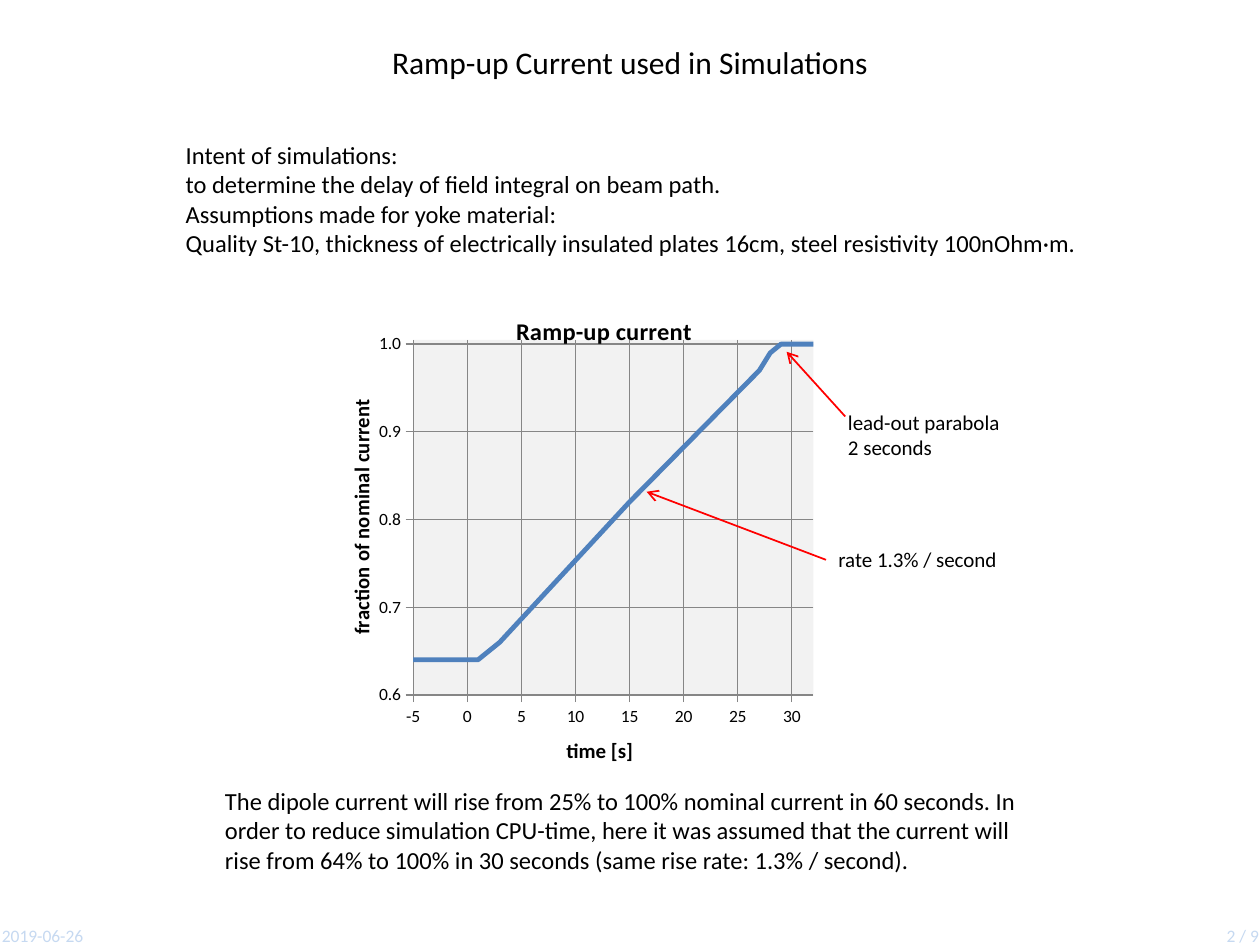
from lxml import etree
from pptx import Presentation
from pptx.chart import data
from pptx.dml.color import RGBColor
from pptx.enum import chart as ch, shapes, text
from pptx.oxml import parse_xml
from pptx.oxml.ns import nsdecls, qn
from pptx.util import Pt

FONT = "Calibri"
BLACK = RGBColor(0x00, 0x00, 0x00)
PALE_BLUE = RGBColor(0xC6, 0xD9, 0xF1)
CURVE_BLUE = RGBColor(0x4F, 0x81, 0xBD)
PLOT_GRAY = RGBColor(0xF2, 0xF2, 0xF2)
GRID_GRAY = RGBColor(0x86, 0x86, 0x86)
RED = RGBColor(0xFF, 0x00, 0x00)

RAMP = [(-20, 0.64), (-1, 0.64), (0, 0.64), (0, 0.64), (1, 0.64), (2, 0.65),
        (2, 0.65), (3, 0.66), (15, 0.82), (27, 0.97), (28, 0.99), (28, 0.99),
        (29, 1), (30, 1), (30, 1), (32, 1)]


def style_font(font, size, color=BLACK, bold=False):
    font.name = FONT
    font.size = Pt(size)
    font.bold = bold
    font.color.rgb = color


def add_text(slide, box, lines, size, color=BLACK, align=text.PP_ALIGN.LEFT):
    label = slide.shapes.add_textbox(*map(Pt, box))
    frame = label.text_frame
    frame.word_wrap = True
    frame.auto_size = text.MSO_AUTO_SIZE.SHAPE_TO_FIT_TEXT
    frame.text = "\n".join(lines)
    for paragraph in frame.paragraphs:
        paragraph.alignment = align
        for run in paragraph.runs:
            style_font(run.font, size, color)
    return label


def add_arrow(slide, start, tip):
    arrow = slide.shapes.add_connector(
        shapes.MSO_CONNECTOR.STRAIGHT, *map(Pt, (*start, *tip)))
    arrow.line.color.rgb = RED
    arrow.line.width = Pt(1)
    line = arrow.line._get_or_add_ln()
    etree.SubElement(line, qn("a:tailEnd"), type="arrow")
    etree.SubElement(arrow._element.spPr, qn("a:effectLst"))
    return arrow


def manual_layout(x, y, extent=None):
    target = '<c:layoutTarget val="inner"/>' if extent else ""
    size = '<c:w val="{}"/><c:h val="{}"/>'.format(*extent) if extent else ""
    return parse_xml(
        f'<c:layout {nsdecls("c")}><c:manualLayout>{target}'
        f'<c:xMode val="edge"/><c:yMode val="edge"/>'
        f'<c:x val="{x}"/><c:y val="{y}"/>{size}</c:manualLayout></c:layout>')


def set_title(owner, words, size, x, y):
    title = owner.chart_title if hasattr(owner, "chart_title") else owner.axis_title
    title.text_frame.text = words
    style_font(title.text_frame.paragraphs[0].runs[0].font, size, bold=True)
    element = title._element
    for layout in element.findall(qn("c:layout")):
        element.remove(layout)
    element.find(qn("c:tx")).addnext(manual_layout(x, y))


def style_axis(axis, low, high, step, number_format):
    axis.minimum_scale, axis.maximum_scale, axis.major_unit = low, high, step
    axis.major_tick_mark = ch.XL_TICK_MARK.OUTSIDE
    axis.minor_tick_mark = ch.XL_TICK_MARK.NONE
    axis.tick_label_position = ch.XL_TICK_LABEL_POSITION.LOW
    axis.crosses = ch.XL_AXIS_CROSSES.MINIMUM
    axis.tick_labels.number_format = number_format
    axis.tick_labels.number_format_is_linked = False
    axis.has_major_gridlines = True
    for line in (axis.format.line, axis.major_gridlines.format.line):
        line.color.rgb = GRID_GRAY
        line.width = Pt(0.75)


def add_ramp_chart(slide, box):
    ramp_data = data.XyChartData()
    series_data = ramp_data.add_series("Series 1")
    for time, fraction in RAMP:
        series_data.add_data_point(time, fraction)
    chart = slide.shapes.add_chart(
        ch.XL_CHART_TYPE.XY_SCATTER_SMOOTH_NO_MARKERS,
        *map(Pt, box), ramp_data).chart
    chart.has_legend = False
    style_font(chart.font, 10)
    style_axis(chart.category_axis, -5, 32, 5, "General")
    style_axis(chart.value_axis, 0.6, 1.005, 0.1, "0.0")
    set_title(chart, "Ramp-up current", 14, 0.37, 0.04)
    set_title(chart.category_axis, "time [s]", 12, 0.47, 0.94)
    set_title(chart.value_axis, "fraction of nominal current", 12, 0.04, 0.23)

    plot = chart.plots[0]
    plot.vary_by_categories = False
    curve = plot.series[0]
    curve.smooth = True
    curve.format.line.color.rgb = CURVE_BLUE
    curve.format.line.width = Pt(2.75)

    area = chart._chartSpace.chart.plotArea
    for layout in area.findall(qn("c:layout")):
        area.remove(layout)
    area.insert(0, manual_layout(0.177, 0.103, (0.785, 0.756)))
    area.append(parse_xml(
        f'<c:spPr {nsdecls("c", "a")}><a:solidFill><a:srgbClr val="{PLOT_GRAY}"/>'
        '</a:solidFill></c:spPr>'))


def add_ramp_figure(slide, box):
    left, top, width, height = box
    add_ramp_chart(slide, box)
    right = left + width
    add_text(slide, (right + 1.5, top + 64, 102, 36),
             ["lead-out parabola", "2 seconds"], 12)
    add_arrow(slide, (right + 7, top + 71.5), (right - 26.5, top + 34.5))
    rate = add_text(slide, (right - 4, top + 142.5, 108, 21.8),
                    ["rate 1.3% / second"], 12)
    rate_arrow = add_arrow(slide, (right - 4, top + 153.5), (right - 106.5, top + 114.5))
    rate_arrow.begin_connect(rate, 1)


def add_footer(slide, box):
    left, top, width, height = box
    add_text(slide, (left, top, 105, height), ["2019-06-26"], 10, PALE_BLUE)
    add_text(slide, (left + width - 58, top, 58, height), ["2 / 9"], 10,
             PALE_BLUE, text.PP_ALIGN.RIGHT)


def main():
    deck = Presentation()
    deck.slide_width, deck.slide_height = Pt(720), Pt(540)
    slide = deck.slides.add_slide(deck.slide_layouts[6])
    add_footer(slide, (-6, 525, 732.5, 19.4))
    add_text(slide, (76.5, 21, 567, 29), ["Ramp-up Current used in Simulations"],
             18, align=text.PP_ALIGN.CENTER)
    add_text(slide, (99, 76.5, 533, 75), [
        "Intent of simulations:",
        "to determine the delay of field integral on beam path.",
        "Assumptions made for yoke material:",
        "Quality St-10, thickness of electrically insulated plates 16cm, "
        "steel resistivity 100nOhm·m."], 14)
    add_ramp_figure(slide, (184.5, 166.5, 291.5, 273.5))
    add_text(slide, (121.5, 445.5, 476, 58), [
        "The dipole current will rise from 25% to 100% nominal current in 60 seconds. "
        "In order to reduce simulation CPU-time, here it was assumed that the current "
        "will rise from 64% to 100% in 30 seconds (same rise rate: 1.3% / second)."], 14)
    deck.save("out.pptx")


if __name__ == "__main__":
    main()
